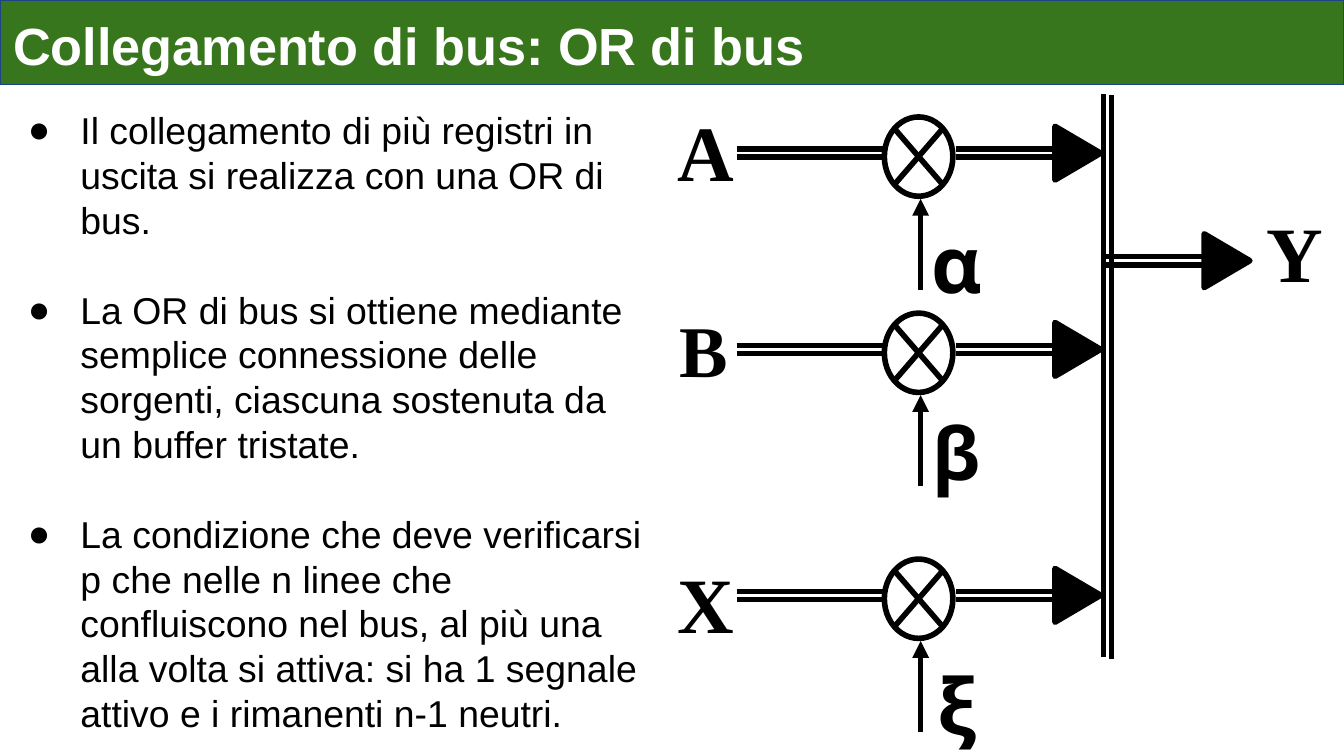
import pptx
import pptx.util
import pptx.dml.color
import pptx.enum.shapes
import pptx.enum.text
import pptx.oxml
import pptx.oxml.ns
import lxml.etree

Inches, Pt = pptx.util.Inches, pptx.util.Pt
RGB = pptx.dml.color.RGBColor.from_string
MSO = pptx.enum.shapes.MSO_SHAPE
ALIGN = pptx.enum.text.PP_ALIGN
ANCHOR = pptx.enum.text.MSO_ANCHOR
qn = pptx.oxml.ns.qn
BLACK = "000000"

prs = pptx.Presentation()
prs.slide_width = Inches(10)
prs.slide_height = Inches(10) * 9 // 16
s = prs.slides.add_slide(prs.slide_layouts[6])


def add_text(sp, paragraphs, size, font="Arial", color=BLACK, bold=False,
             align=ALIGN.LEFT, insets=(0.1, 0.1), wrap=True):
    """Fill a shape with paragraphs; insets are (side, top) in inches."""
    tf = sp.text_frame
    tf.word_wrap = wrap
    tf.vertical_anchor = ANCHOR.TOP
    tf.margin_left = tf.margin_right = Inches(insets[0])
    tf.margin_top = tf.margin_bottom = Inches(insets[1])
    for i, text in enumerate(paragraphs):
        p = tf.add_paragraph() if i else tf.paragraphs[0]
        p.alignment = align
        r = p.add_run()
        r.text = text
        r.font.size, r.font.name, r.font.bold = Pt(size), font, bold
        r.font.color.rgb = RGB(color)
    return tf


def add_line(x1, y1, x2, y2):
    line = s.shapes.add_connector(pptx.enum.shapes.MSO_CONNECTOR.STRAIGHT,
                                  Inches(x1), Inches(y1), Inches(x2), Inches(y2))
    line.line.color.rgb, line.line.width = RGB(BLACK), Pt(3)
    lxml.etree.SubElement(line._element.spPr, qn("a:effectLst"))
    return line


# Title bar
bar = s.shapes.add_shape(MSO.RECTANGLE, 0, 0, Inches(10), Inches(0.63))
bar.shadow.inherit = False
bar.fill.solid()
bar.fill.fore_color.rgb = RGB("38761D")
bar.line.color.rgb, bar.line.width = RGB("1C4587"), Pt(0.75)
add_text(bar, ["Collegamento di bus: OR di bus"], 28, color="FFFFFF", bold=True)

# Bulleted explanation
body = s.shapes.add_textbox(0, Inches(0.7), Inches(4.95), Inches(4.92))
tf = add_text(body, [
    "Il collegamento di più registri in uscita si realizza con una OR di bus.",
    "La OR di bus si ottiene mediante semplice connessione delle sorgenti, "
    "ciascuna sostenuta da un buffer tristate.",
    "La condizione che deve verificarsi p che nelle n linee che confluiscono nel bus, "
    "al più una alla volta si attiva: si ha 1 segnale attivo e i rimanenti n-1 neutri.",
], 20)
for i, p in enumerate(tf.paragraphs):
    p.line_spacing = Pt(24)
    p.space_before = Pt(24 if i else 0)
    pPr = p._p.get_or_add_pPr()
    pPr.set("marL", str(Inches(0.5)))
    pPr.set("indent", str(-Inches(0.39)))
    lxml.etree.SubElement(pPr, qn("a:buFont"), typeface="Arial")
    lxml.etree.SubElement(pPr, qn("a:buChar"), char="●")

# Shared vertical bus
add_line(8.21, 0.7, 8.21, 4.89)
add_line(8.27, 0.71, 8.27, 4.9)

# Tristate buffers: junction and control arrow on each source
tops = [0.87, 2.33, 4.16]
for top in tops:
    junction = s.shapes.add_shape(MSO.FLOWCHART_SUMMING_JUNCTION, Inches(6.58), Inches(top),
                                  Inches(0.51), Inches(0.59))
    junction.shadow.inherit = False
    junction.fill.solid()
    junction.fill.fore_color.rgb = RGB("FFFFFF")
    junction.line.color.rgb, junction.line.width = RGB(BLACK), Pt(3)
    control = add_line(6.85, top + 0.61, 6.85, top + 1.29)
    lxml.etree.SubElement(control.line._get_or_add_ln(), qn("a:headEnd"), type="triangle")

# Double-line buses: start, end, y of the upper line
buses = [(x1, x2, top + 0.24) for top in tops for x1, x2 in [(5.48, 6.57), (7.11, 7.86)]]
buses.append((8.23, 8.97, 1.91))
for x1, x2, y in buses:
    for dy in (0, 0.06):
        add_line(x1, y + dy, x2, y + dy)

# Bus arrowheads: left edge and middle height
for x, y in [(7.85, top + 0.27) for top in tops] + [(8.96, 1.94)]:
    fb = s.shapes.build_freeform(Inches(x), Inches(y + 0.2))
    fb.add_line_segments([(Inches(x + 0.34), Inches(y)), (Inches(x), Inches(y - 0.2))])
    head = fb.convert_to_shape()
    head.shadow.inherit = False
    head.fill.solid()
    head.fill.fore_color.rgb = RGB(BLACK)
    head.line.color.rgb, head.line.width = RGB(BLACK), Pt(3)

# Signal names
for name, x, y, w, size, font in [
    ("A", 4.95, 0.73, 0.58, 42, "Times New Roman"),
    ("B", 4.95, 2.23, 0.58, 39, "Times New Roman"),
    ("X", 4.95, 4.09, 0.58, 42, "Times New Roman"),
    ("Y", 9.22, 1.48, 0.83, 42, "Times New Roman"),
    ("α", 6.83, 1.56, 0.58, 42, "Noto Sans"),
    ("β", 6.83, 2.99, 0.58, 39, "Noto Sans"),
    ("ξ", 6.83, 4.85, 0.58, 42, "Noto Sans"),
]:
    label = s.shapes.add_textbox(Inches(x), Inches(y), Inches(w), Inches(0.68))
    add_text(label, [name], size, font=font, bold=True, align=ALIGN.CENTER,
             insets=(0.09, 0.04), wrap=False)

prs.save("out.pptx")
